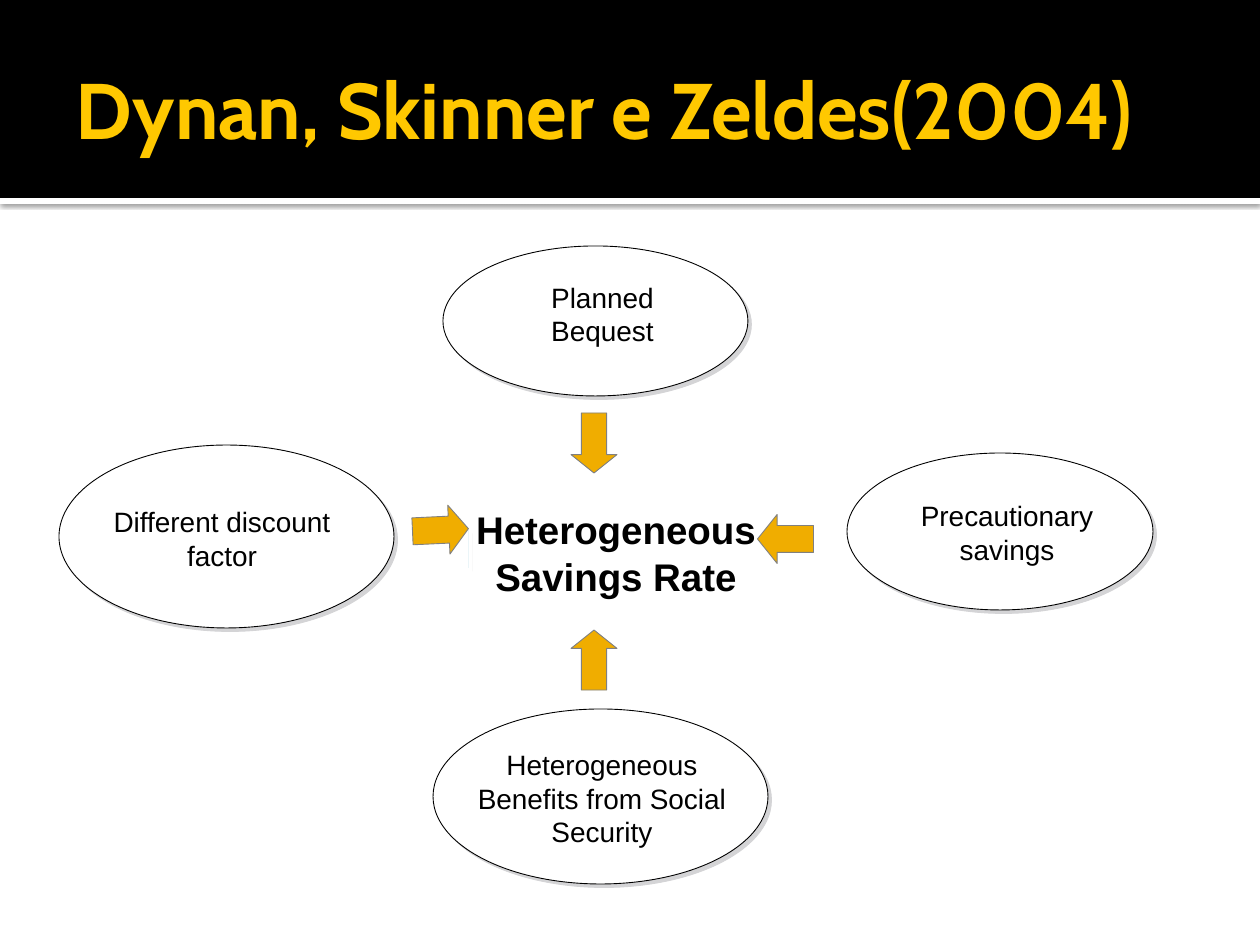
from dataclasses import dataclass

from lxml import etree
from pptx import Presentation
from pptx import util as u
from pptx.dml.color import RGBColor
from pptx.enum import shapes, text
from pptx.oxml.ns import qn

PX_PER_INCH = 126
SHAPE = shapes.MSO_SHAPE


@dataclass(frozen=True)
class Theme:
    black: str = "000000"
    white: str = "FFFFFF"
    title: str = "FFC800"
    arrow: str = "F0AD00"
    arrow_line: str = "808080"
    mark: str = "60B5CC"
    shade: str = "D4D4D6"
    title_font: str = "Cabin"
    body_font: str = "Arial"
    title_size: int = 45
    center_size: int = 22
    factor_size: int = 16
    line_width: float = 0.5


@dataclass(frozen=True)
class Box:
    left: int
    top: int
    width: int
    height: int


@dataclass(frozen=True)
class Shadow:
    color: str
    opacity: int
    blur: float
    distance: float
    angle: int


@dataclass(frozen=True)
class Factor:
    label: str
    ellipse: Box
    label_box: Box
    arrow: Box
    arrow_turn: float


THEME = Theme()
DROP = Shadow(THEME.shade, 100, 0, 2.8, 45)
STRIP_SHADOW = Shadow(THEME.black, 60, 2.5, 0.8, 90)

FACTORS = [
    Factor("Planned Bequest", Box(443, 246, 305, 150),
           Box(502, 280, 201, 68), Box(571, 413, 46, 60), 0),
    Factor("Heterogeneous Benefits from Social Security", Box(433, 709, 335, 175),
           Box(463, 747, 278, 102), Box(571, 630, 46, 60), 180),
    Factor("Precautionary savings", Box(847, 453, 306, 157),
           Box(906, 498, 202, 68), Box(761, 511, 49, 56), 90),
    Factor("Different discount factor", Box(59, 445, 335, 183),
           Box(98, 504, 248, 68), Box(416, 502, 49, 56), 267.3),
]


def px(length: int) -> u.Emu:
    return u.Inches(length / PX_PER_INCH)


def place(box: Box) -> tuple:
    return px(box.left), px(box.top), px(box.width), px(box.height)


def add_shadow(shape, shadow: Shadow) -> None:
    effects = shape._element.spPr.find(qn("a:effectLst"))
    outer = etree.SubElement(
        effects, qn("a:outerShdw"), blurRad=str(u.Pt(shadow.blur)),
        dist=str(u.Pt(shadow.distance)), dir=str(shadow.angle * 60000),
        algn="tl", rotWithShape="0")
    color = etree.SubElement(outer, qn("a:srgbClr"), val=shadow.color)
    etree.SubElement(color, qn("a:alpha"), val=str(shadow.opacity * 1000))


def add_figure(page, kind, box: Box, fill: str, line: str | None = None,
               shadow: Shadow | None = None):
    shape = page.shapes.add_shape(kind, *place(box))
    shape.shadow.inherit = False
    shape.fill.solid()
    shape.fill.fore_color.rgb = RGBColor.from_string(fill)
    if line:
        shape.line.color.rgb = RGBColor.from_string(line)
        shape.line.width = u.Pt(THEME.line_width)
    else:
        shape.line.fill.background()
    if shadow:
        add_shadow(shape, shadow)
    return shape


def add_label(page, words: str, box: Box, size: int, color: str = THEME.black,
              font: str = THEME.body_font, bold: bool = False,
              align=text.PP_ALIGN.CENTER, before: int = 0) -> None:
    frame = page.shapes.add_textbox(*place(box)).text_frame
    frame.word_wrap = True
    frame.vertical_anchor = text.MSO_ANCHOR.MIDDLE
    frame.margin_left = frame.margin_right = 0
    frame.margin_top = frame.margin_bottom = 0
    para = frame.paragraphs[0]
    para.text = words
    para.alignment = align
    para.space_before = u.Pt(before)
    para.font.name = font
    para.font.size = u.Pt(size)
    para.font.bold = bold
    para.font.color.rgb = RGBColor.from_string(color)


def add_header(page) -> None:
    add_figure(page, SHAPE.RECTANGLE, Box(0, 198, 1260, 6), THEME.white,
               shadow=STRIP_SHADOW)
    add_figure(page, SHAPE.RECTANGLE, Box(0, 0, 1260, 198), THEME.black)
    add_label(page, "Dynan, Skinner e Zeldes(2004)", Box(76, 28, 1115, 160),
              THEME.title_size, THEME.title, THEME.title_font, True,
              text.PP_ALIGN.LEFT)


def add_factor(page, factor: Factor) -> None:
    add_figure(page, SHAPE.OVAL, factor.ellipse, THEME.white, THEME.black, DROP)
    add_label(page, factor.label, factor.label_box, THEME.factor_size, before=1)
    arrow = add_figure(page, SHAPE.DOWN_ARROW, factor.arrow, THEME.arrow,
                       THEME.arrow_line)
    arrow.adjustments[0] = 0.55
    arrow.adjustments[1] = 0.4
    arrow.rotation = factor.arrow_turn


def main() -> None:
    deck = Presentation()
    deck.slide_width, deck.slide_height = px(1260), px(945)
    page = deck.slides.add_slide(deck.slide_layouts[6])
    add_header(page)
    add_figure(page, SHAPE.RECTANGLE, Box(469, 530, 0, 38), THEME.mark, shadow=DROP)
    add_label(page, "Heterogeneous Savings Rate", Box(473, 506, 286, 93),
              THEME.center_size, bold=True)
    for factor in FACTORS:
        add_factor(page, factor)
    deck.save("out.pptx")


if __name__ == "__main__":
    main()
